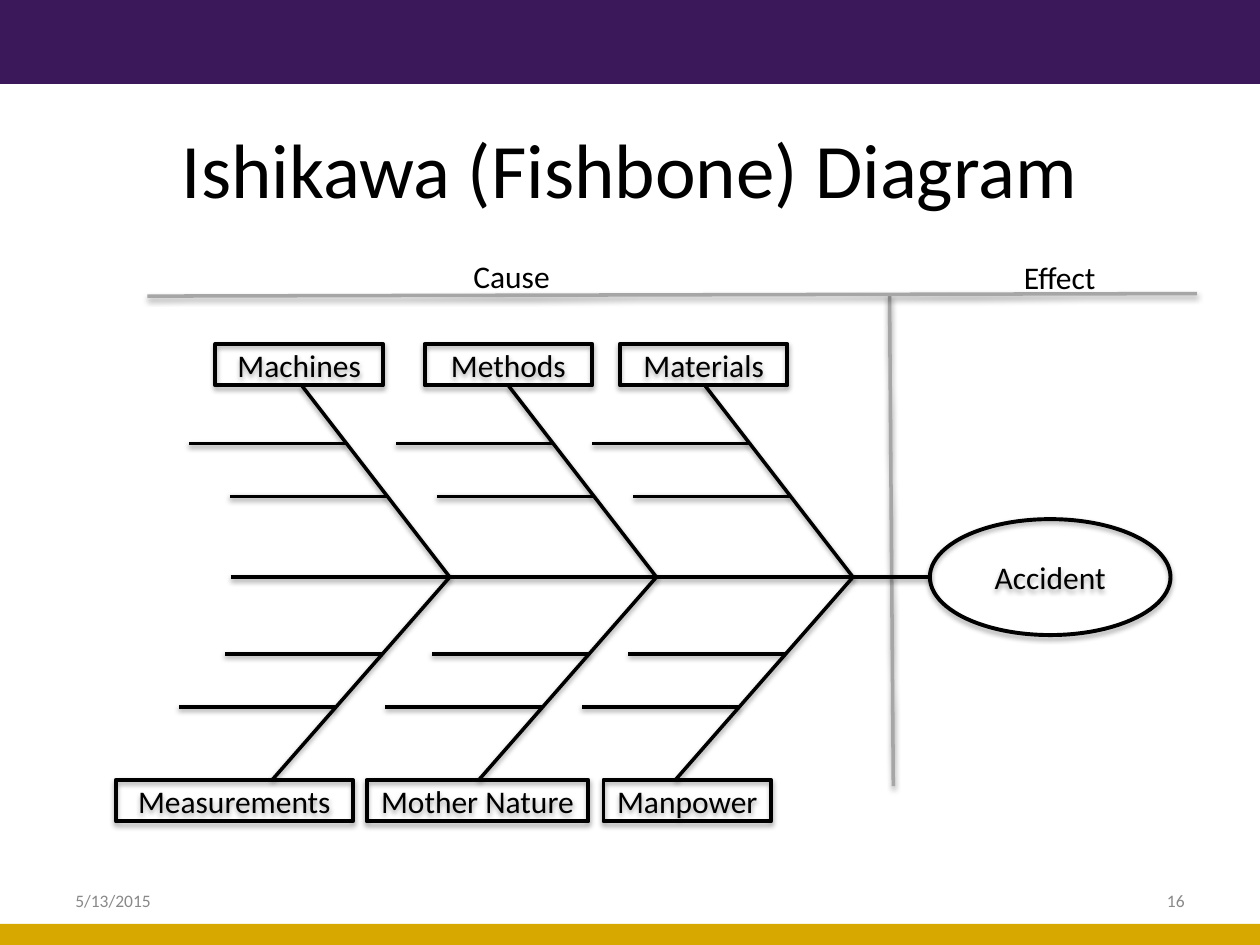
from dataclasses import dataclass

from lxml import etree
from pptx import Presentation
from pptx.dml.color import RGBColor
from pptx.enum.shapes import MSO_CONNECTOR, MSO_SHAPE
from pptx.enum.text import MSO_ANCHOR, PP_ALIGN
from pptx.oxml.ns import qn
from pptx.util import Inches, Pt

STRAIGHT = MSO_CONNECTOR.STRAIGHT
RECTANGLE, OVAL = MSO_SHAPE.RECTANGLE, MSO_SHAPE.OVAL
TOP, MIDDLE = MSO_ANCHOR.TOP, MSO_ANCHOR.MIDDLE
LEFT, CENTER, RIGHT = PP_ALIGN.LEFT, PP_ALIGN.CENTER, PP_ALIGN.RIGHT
COLUMNS, ROWS = 100, 75


@dataclass(frozen=True)
class Theme:
    """Colours, font and point sizes of the deck."""
    purple: str = "3B185A"
    gold: str = "D7A900"
    ink: str = "000000"
    divider: str = "A6A6A6"
    muted: str = "898989"
    font: str = "Calibri"
    title: int = 44
    label: int = 18
    footer: int = 10
    bone: float = 2
    outline: float = 2.25


class FishboneSlide:
    """Draws styled elements on one slide, placed in grid columns and rows."""

    def __init__(self, deck, theme):
        """Add a title-only slide and derive the grid cell from the deck."""
        self.theme = theme
        self.slide = deck.slides.add_slide(deck.slide_layouts[5])
        self.column = deck.slide_width / COLUMNS
        self.row = deck.slide_height / ROWS

    def place(self, *cells):
        """Turn alternating columns and rows into lengths."""
        return [round(cell * (self.row if i % 2 else self.column))
                for i, cell in enumerate(cells)]

    def letter(self, shape, text, size, color, align=CENTER, anchor=MIDDLE, wrap=True):
        """Put one styled run into a shape."""
        frame = shape.text_frame
        frame.word_wrap = wrap
        frame.vertical_anchor = anchor
        paragraph = frame.paragraphs[0]
        paragraph.alignment = align
        run = paragraph.add_run()
        run.text = text
        run.font.name = self.theme.font
        run.font.size = Pt(size)
        run.font.color.rgb = RGBColor.from_string(color)

    def shade(self, shape, distance, opacity):
        """Give a shape or connector a soft shadow straight below it."""
        effects = etree.SubElement(shape._element.spPr, qn("a:effectLst"))
        shadow = etree.SubElement(
            effects, qn("a:outerShdw"), blurRad=str(Pt(3.1)),
            dist=str(Pt(distance)), dir="5400000", rotWithShape="0")
        tint = etree.SubElement(shadow, qn("a:srgbClr"), val=self.theme.ink)
        etree.SubElement(tint, qn("a:alpha"), val=str(opacity * 1000))

    def title(self, text, *cells):
        """Move and fill the title placeholder."""
        heading = self.slide.shapes.title
        heading.left, heading.top, heading.width, heading.height = self.place(*cells)
        self.letter(heading, text, self.theme.title, self.theme.ink)

    def band(self, color, *cells):
        """Draw a plain coloured band."""
        band = self.slide.shapes.add_shape(RECTANGLE, *self.place(*cells))
        band.shadow.inherit = False
        band.fill.solid()
        band.fill.fore_color.rgb = RGBColor.from_string(color)
        band.line.fill.background()

    def line(self, color, *cells):
        """Draw a shadowed straight line between two grid points."""
        line = self.slide.shapes.add_connector(STRAIGHT, *self.place(*cells))
        line.line.color.rgb = RGBColor.from_string(color)
        line.line.width = Pt(self.theme.bone)
        self.shade(line, 1.6, 38)

    def text(self, text, size, color, *cells, **style):
        """Add a text box."""
        box = self.slide.shapes.add_textbox(*self.place(*cells))
        self.letter(box, text, size, color, **style)

    def node(self, kind, text, *cells):
        """Draw an outlined, shadowed shape with a label."""
        node = self.slide.shapes.add_shape(kind, *self.place(*cells))
        node.fill.background()
        node.line.color.rgb = RGBColor.from_string(self.theme.ink)
        node.line.width = Pt(self.theme.outline)
        self.shade(node, 1.8, 35)
        self.letter(node, text, self.theme.label, self.theme.ink, wrap=False)

    def bone(self, joint, spine, reach, end, twigs):
        """Draw a slanted bone from the spine with its level twigs."""
        ink = self.theme.ink
        self.line(ink, joint - reach, end, joint, spine)
        for level in twigs:
            tip = joint - reach * (level - spine) / (end - spine)
            self.line(ink, tip, level, tip - 12.5, level)


def main():
    """Build and save the fishbone slide."""
    theme = Theme()
    deck = Presentation()
    deck.slide_width, deck.slide_height = Inches(10), Inches(7.5)
    page = FishboneSlide(deck, theme)

    page.band(theme.purple, 0, 0, COLUMNS, 6.67)
    page.band(theme.gold, 0, 73.33, COLUMNS, 1.67)
    page.title("Ishikawa (Fishbone) Diagram", 5, 8.33, 90, 10)
    for text, left, align in (("5/13/2015", 5, LEFT), ("16", 71.7, RIGHT)):
        page.text(text, theme.footer, theme.muted, left, 69.5, 23.3, 4, align=align)

    page.line(theme.divider, 70.6, 23.5, 70.9, 62.4)
    page.line(theme.divider, 11.7, 23.5, 95, 23.3)
    for text, left, top, width in (("Cause", 36.5, 19.9, 8.2), ("Effect", 80.2, 20, 7.8)):
        page.text(text, theme.label, theme.ink, left, top, width, 4,
                  anchor=TOP, wrap=False)

    spine, upper_end, lower_end = 45.8, 30.6, 61.9
    page.line(theme.ink, 18.3, spine, 73.8, spine)
    for joint in (35.7, 52.1, 67.7):
        page.bone(joint, spine, 11.75, upper_end, (35.2, 39.4))
        page.bone(joint, spine, 14.1, lower_end, (51.9, 56.1))

    box_height = 3.3
    causes = {
        upper_end - box_height: (("Machines", 17.1, 13.3), ("Methods", 33.7, 13.3),
                                 ("Materials", 49.2, 13.3)),
        lower_end: (("Measurements", 9.2, 18.8), ("Mother Nature", 29.1, 17.6),
                    ("Manpower", 47.9, 13.3)),
    }
    for top, row in causes.items():
        for cause, left, width in row:
            page.node(RECTANGLE, cause, left, top, width, box_height)
    page.node(OVAL, "Accident", 73.8, 41.2, 19.1, 9.2)

    deck.save("out.pptx")


if __name__ == "__main__":
    main()
